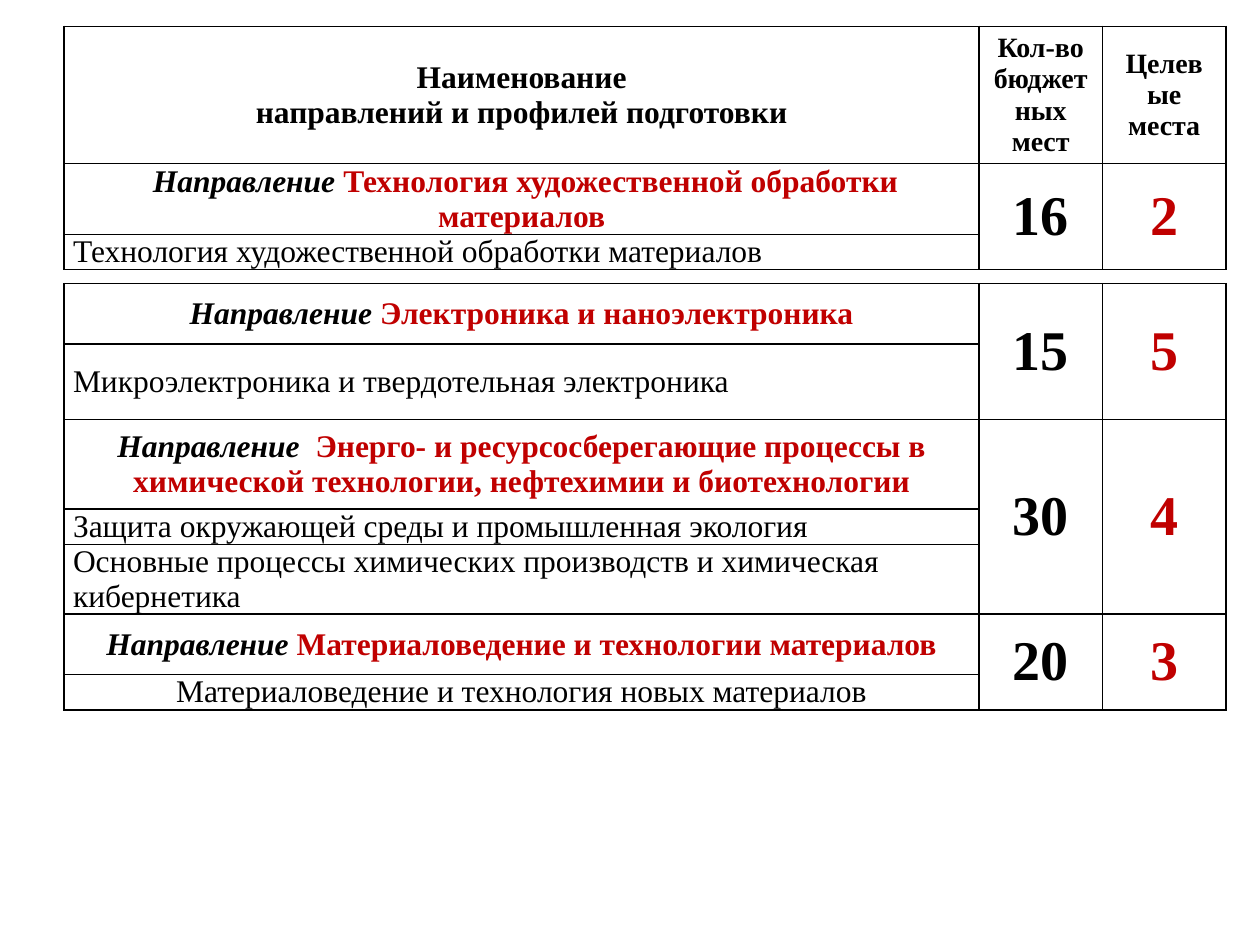
import pptx
import pptx.util
import pptx.dml.color
import pptx.enum.text
import pptx.oxml
import pptx.oxml.ns

Inches = pptx.util.Inches
ALIGN = pptx.enum.text.PP_ALIGN
FONT = "Times New Roman"
COLORS = {"ink": "000000", "red": "C00000"}
COLS = [7.26, 0.98, 0.98]
LEFT = 0.51

HEAD = {
    "names": ["Наименование", "направлений и профилей подготовки"],
    "counts": ["Кол-во бюджетных мест", "Целевые места"],
    "height": 1.09,
}
ART = [
    {"lead": " Направление ", "title": "Технология художественной обработки материалов",
     "height": 0.56, "seats": ["16", "2"],
     "tracks": [("Технология художественной обработки материалов", ALIGN.JUSTIFY, 0.28)]},
]
TECH = [
    {"lead": "Направление ", "title": "Электроника и наноэлектроника",
     "height": 0.48, "seats": ["15", "5"],
     "tracks": [("Микроэлектроника и твердотельная электроника", ALIGN.JUSTIFY, 0.6)]},
    {"lead": "Направление  ",
     "title": "Энерго- и ресурсосберегающие процессы в химической технологии, "
              "нефтехимии и биотехнологии",
     "height": 0.71, "seats": ["30", "4"],
     "tracks": [("Защита окружающей среды и промышленная экология", ALIGN.LEFT, 0.28),
                ("Основные процессы химических производств и химическая кибернетика",
                 ALIGN.LEFT, 0.55)]},
    {"lead": "Направление ", "title": "Материаловедение и технологии материалов",
     "height": 0.48, "seats": ["20", "3"],
     "tracks": [("Материаловедение и технология новых материалов", ALIGN.CENTER, 0.28)]},
]
TABLES = [(0.21, HEAD, ART), (2.25, None, TECH)]


def paint(font, color):
    font.color.rgb = pptx.dml.color.RGBColor.from_string(COLORS[color])


def style(par, size, bold=True, align=ALIGN.CENTER, color="ink"):
    par.alignment = align
    par.font.name = FONT
    par.font.size = pptx.util.Pt(size)
    par.font.bold = bold
    paint(par.font, color)


def write(cell, text, size, **look):
    cell.text = text
    for par in cell.text_frame.paragraphs:
        style(par, size, **look)


def write_title(cell, group):
    par = cell.text_frame.paragraphs[0]
    style(par, 18)
    lead, title = par.add_run(), par.add_run()
    lead.text, title.text = group["lead"], group["title"]
    lead.font.italic = True
    paint(title.font, "red")


def frame(cell):
    cell.fill.background()
    cell.vertical_anchor = pptx.enum.text.MSO_ANCHOR.MIDDLE
    props = cell._tc.get_or_add_tcPr()
    for place, side in enumerate("LRTB"):
        line = pptx.oxml.parse_xml(
            f'<a:ln{side} {pptx.oxml.ns.nsdecls("a")} w="12700"><a:solidFill>'
            f'<a:srgbClr val="{COLORS["ink"]}"/></a:solidFill></a:ln{side}>')
        props.insert(place, line)


def add_grid(slide, top, head, groups):
    heights = [head["height"]] if head else []
    for group in groups:
        heights += [group["height"]] + [track[2] for track in group["tracks"]]
    grid = slide.shapes.add_table(
        len(heights), len(COLS), Inches(LEFT), Inches(top),
        Inches(sum(COLS)), Inches(sum(heights))).table
    grid.first_row = grid.horz_banding = False
    for col, width in zip(grid.columns, COLS):
        col.width = Inches(width)
    for row, height in zip(grid.rows, heights):
        row.height = Inches(height)
    for cell in grid.iter_cells():
        frame(cell)
    for row in range(len(heights)):
        cell = grid.cell(row, 0)
        cell.margin_left = cell.margin_right = Inches(0.07)
        cell.margin_top = cell.margin_bottom = 0

    row = 0
    if head:
        write(grid.cell(0, 0), "\n".join(head["names"]), 18)
        for col, text in enumerate(head["counts"], 1):
            write(grid.cell(0, col), text, 16)
        row = 1
    for group in groups:
        last = row + len(group["tracks"])
        write_title(grid.cell(row, 0), group)
        for step, (text, align, height) in enumerate(group["tracks"], 1):
            write(grid.cell(row + step, 0), text, 18, bold=False, align=align)
        for col, color in enumerate(["ink", "red"], 1):
            cell = grid.cell(row, col)
            cell.merge(grid.cell(last, col))
            write(cell, group["seats"][col - 1], 32, color=color)
        row = last + 1


def main():
    deck = pptx.Presentation()
    deck.slide_width, deck.slide_height = Inches(10), Inches(7.5)
    slide = deck.slides.add_slide(deck.slide_layouts[6])
    for top, head, groups in TABLES:
        add_grid(slide, top, head, groups)
    deck.save("out.pptx")


if __name__ == "__main__":
    main()
